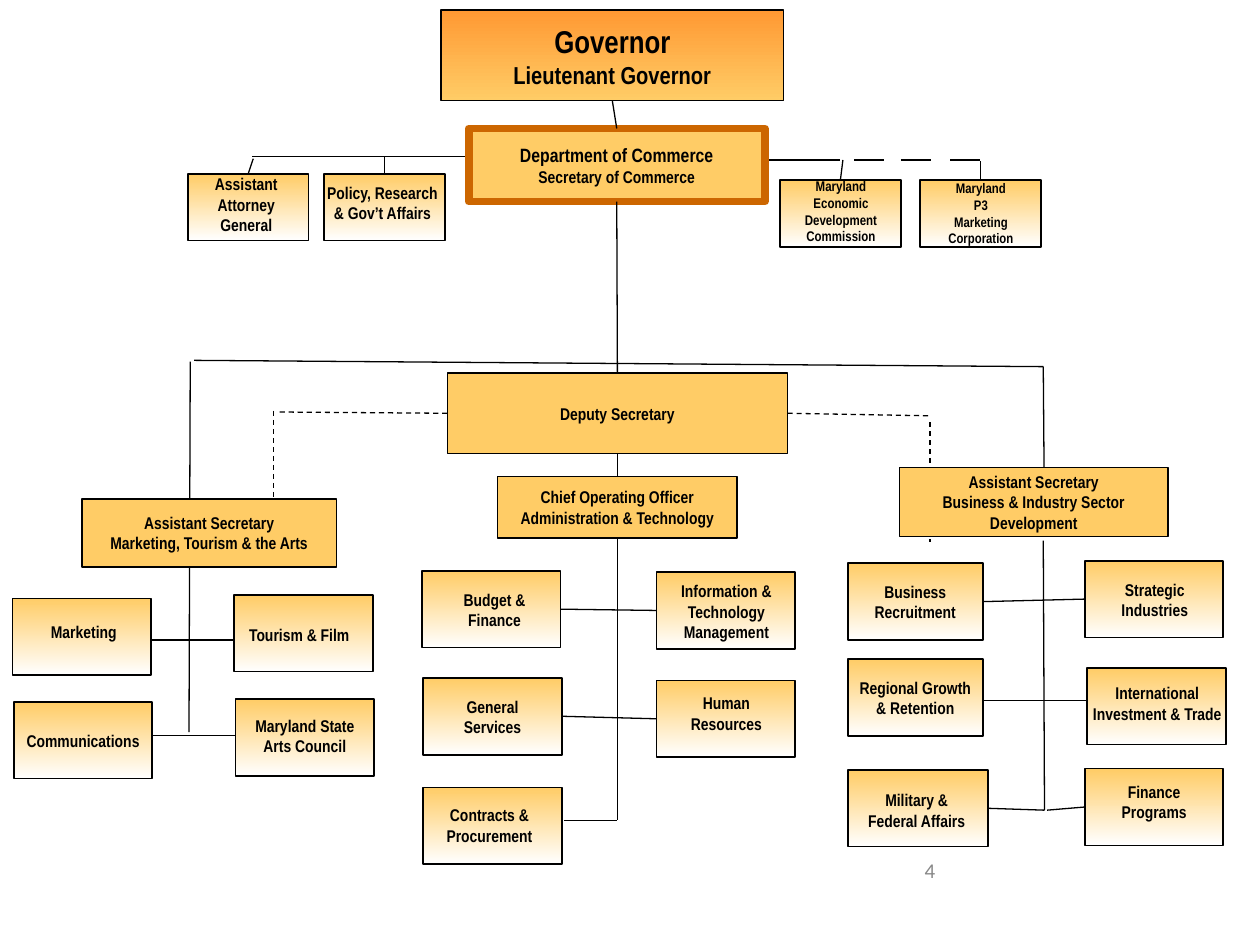
from lxml import etree
from pptx import Presentation
from pptx.dml.color import RGBColor
from pptx.enum.dml import MSO_LINE
from pptx.enum.shapes import MSO_CONNECTOR, MSO_SHAPE
from pptx.enum.text import MSO_ANCHOR, PP_ALIGN
from pptx.oxml.ns import qn
from pptx.util import Inches, Pt

RECT = MSO_SHAPE.RECTANGLE
LINE = MSO_CONNECTOR.STRAIGHT
DASH = MSO_LINE.DASH
TOP, MID = MSO_ANCHOR.TOP, MSO_ANCHOR.MIDDLE
MIDST, RIGHT = PP_ALIGN.CENTER, PP_ALIGN.RIGHT
NORTH, WEST, SOUTH, EAST = range(4)

COLORS = {"ink": "000000", "gold": "FFCC66", "amber": "FF9933",
          "rust": "CC6600", "white": "FFFFFF", "gray": "888888"}
FADE = ("gold", "white")
BODY = {"name": "Arial Narrow", "bold": True}

HEADS = {
    "gov": ((3.5, 0.08, 2.72, 0.72), ("amber", "gold"), "ink", 0.75,
            "Governor\nLieutenant Governor", (18, 14)),
    "dept": ((3.72, 1.02, 2.35, 0.58), ("gold",), "rust", 4.5,
             "Department of Commerce\nSecretary of Commerce", (11, 9.7)),
    "deputy": ((3.55, 2.96, 2.7, 0.64), ("gold",), "ink", 0.75,
               "Deputy Secretary", (9.7,)),
    "chief": ((3.95, 3.78, 1.9, 0.49), ("gold",), "ink", 0.75,
              "Chief Operating Officer\nAdministration & Technology", (9.7,)),
    "arts": ((0.65, 3.96, 2.02, 0.54), ("gold",), "ink", 0.75,
             "Assistant Secretary\nMarketing, Tourism & the Arts", (9.7,)),
    "sector": ((7.14, 3.71, 2.13, 0.55), ("gold",), "ink", 0.75,
               "Assistant Secretary\nBusiness & Industry Sector\nDevelopment",
               (9.7,)),
    "comms": ((0.11, 5.57, 1.1, 0.61), FADE, "ink", 1,
              "Communications", (9.7,)),
    "recruit": ((6.73, 4.47, 1.07, 0.61), FADE, "ink", 1,
                "Business\nRecruitment", (9.7,)),
    "growth": ((6.73, 5.23, 1.07, 0.61), FADE, "ink", 1,
               "Regional Growth\n& Retention", (9.7,)),
}

UNITS = {
    "law": ((1.49, 1.38, 0.96, 0.53), (1.33, 1.33, 1.25, 0.59),
            "Assistant\nAttorney\nGeneral", 9.7),
    "policy": ((2.57, 1.38, 0.96, 0.53), (2.41, 1.4, 1.25, 0.43),
               "Policy, Research\n& Gov’t Affairs", 9.7),
    "econ": ((6.19, 1.43, 0.96, 0.53), (6.05, 1.36, 1.25, 0.64),
             "Maryland\nEconomic\nDevelopment\nCommission", 8),
    "corp": ((7.3, 1.43, 0.96, 0.53), (7.16, 1.38, 1.25, 0.63),
             "Maryland\nP3\nMarketing\nCorporation", 7.9),
    "market": ((0.1, 4.75, 1.1, 0.61), (0.04, 4.88, 1.25, 0.41),
               "Marketing", 9.7),
    "film": ((1.86, 4.72, 1.1, 0.61), (1.75, 4.91, 1.25, 0.26),
             "Tourism & Film", 9.7),
    "council": ((1.87, 5.55, 1.1, 0.61), (1.82, 5.63, 1.2, 0.43),
                "Maryland State Arts Council", 9.7),
    "budget": ((3.35, 4.53, 1.1, 0.61), (3.3, 4.63, 1.25, 0.43),
               "Budget &\nFinance", 9.7),
    "info": ((5.21, 4.54, 1.1, 0.61), (5.14, 4.56, 1.25, 0.59),
             "Information & Technology Management", 9.7),
    "general": ((3.36, 5.38, 1.1, 0.61), (3.23, 5.48, 1.36, 0.43),
                "General\nServices", 9.7),
    "human": ((5.21, 5.4, 1.1, 0.61), (5.14, 5.45, 1.25, 0.43),
              "Human\nResources", 9.7),
    "buying": ((3.36, 6.25, 1.1, 0.61), (3.26, 6.34, 1.25, 0.43),
               "Contracts &\nProcurement", 9.7),
    "plans": ((8.61, 4.45, 1.1, 0.61), (8.54, 4.55, 1.25, 0.43),
              "Strategic\nIndustries", 9.7),
    "trade": ((8.63, 5.3, 1.1, 0.61), (8.56, 5.37, 1.25, 0.43),
              "International\nInvestment & Trade", 9.7),
    "army": ((6.73, 6.11, 1.11, 0.61), (6.65, 6.22, 1.25, 0.43),
             "Military &\nFederal Affairs", 9.7),
    "funds": ((8.61, 6.1, 1.1, 0.61), (8.55, 6.15, 1.22, 0.43),
              "Finance\nPrograms", 9.7),
}

WIRES = [
    ((1.51, 2.87), (1.5, 5.81)), ((1.54, 2.86), (8.28, 2.91)),
    ((8.28, 2.91), (8.29, 4.17)), ((8.28, 4.29), (8.29, 6.43)),
    ((2, 1.24), (3.72, 1.24)), ((4.16, 1.27), (6.67, 1.27)),
    ((1.2, 5.08), (1.86, 5.08)), ((1.21, 5.84), (1.87, 5.84)),
    ((7.8, 5.56), (8.63, 5.56)), ((4.48, 6.51), (4.9, 6.51)),
]
DOTS = [((2.17, 3.26), (2.17, 4.24)), ((7.38, 3.35), (7.38, 4.3))]
JOINS = [
    (("gov", SOUTH), ("dept", NORTH)), (("dept", SOUTH), ("deputy", NORTH)),
    (("deputy", SOUTH), ("chief", NORTH)), (("chief", SOUTH), (4.9, 6.51)),
    ((2.01, 1.26), ("law", NORTH)), ((3.05, 1.24), ("policy", NORTH)),
    ((6.69, 1.27), ("econ", NORTH)), ((7.78, 1.28), ("corp", NORTH)),
    (("budget", EAST), ("info", WEST)), (("general", EAST), ("human", WEST)),
    (("recruit", EAST), ("plans", WEST)), (("army", EAST), (8.29, 6.43)),
    ((8.31, 6.43), ("funds", WEST)),
]
SPURS = [(("deputy", WEST), (2.19, 3.27)), (("deputy", EAST), (7.38, 3.3))]


def rgb(key):
    return RGBColor.from_string(COLORS[key])


def apply(item, vals):
    for key, val in vals.items():
        setattr(item, key, val)


def write(shape, text, sizes, font=BODY, ink="ink", align=MIDST,
          anchor=MID, wrap=False):
    frame = shape.text_frame
    frame.text = text
    apply(frame, {"word_wrap": wrap, "vertical_anchor": anchor})
    for num, para in enumerate(frame.paragraphs):
        para.alignment = align
        size = Pt(sizes[min(num, len(sizes) - 1)])
        apply(para.font, {**font, "size": size})
        para.font.color.rgb = rgb(ink)


def box(slide, at, fill, edge="ink", width=1):
    shape = slide.shapes.add_shape(RECT, *map(Inches, at))
    shape.shadow.inherit = False
    if len(fill) == 1:
        shape.fill.solid()
        shape.fill.fore_color.rgb = rgb(fill[0])
    else:
        shape.fill.gradient()
        shape.fill.gradient_angle = 270
        for stop, key in zip(shape.fill.gradient_stops, fill):
            stop.color.rgb = rgb(key)
    shape.line.color.rgb = rgb(edge)
    shape.line.width = Pt(width)
    return shape


def label(slide, at, text, size, **style):
    area = slide.shapes.add_textbox(*map(Inches, at))
    write(area, text, (size,), wrap=True, **style)


def wire(slide, start, end, boxes=None, dash=None):
    spots = [(0, 0) if isinstance(spot[0], str) else spot
             for spot in (start, end)]
    line = slide.shapes.add_connector(
        LINE, *(Inches(val) for spot in spots for val in spot))
    for spot, join in ((start, line.begin_connect), (end, line.end_connect)):
        if isinstance(spot[0], str):
            join(boxes[spot[0]], spot[1])
    line.line.color.rgb = rgb("ink")
    apply(line.line, {"width": Pt(0.75), "dash_style": dash})
    etree.SubElement(line._element.spPr, qn("a:effectLst"))


def main():
    deck = Presentation()
    apply(deck, {"slide_width": Inches(10), "slide_height": Inches(7.5)})
    slide = deck.slides.add_slide(deck.slide_layouts[6])
    for start, end in WIRES:
        wire(slide, start, end)
    for start, end in DOTS:
        wire(slide, start, end, dash=DASH)
    for left in (6.78, 7.15, 7.54):
        wire(slide, (left, 1.27), (left + 0.24, 1.27))
    boxes = {}
    for key, (at, fill, edge, width, text, sizes) in HEADS.items():
        boxes[key] = box(slide, at, fill, edge, width)
        write(boxes[key], text, sizes)
    for key, (at, *_) in UNITS.items():
        boxes[key] = box(slide, at, FADE)
    for start, end in JOINS:
        wire(slide, start, end, boxes)
    for start, end in SPURS:
        wire(slide, start, end, boxes, DASH)
    for _, at, text, size in UNITS.values():
        label(slide, at, text, size, anchor=TOP)
    label(slide, (5.27, 6.71, 2.25, 0.4), "4", 12, font={"name": "Calibri"},
          ink="gray", align=RIGHT)
    deck.save("out.pptx")


if __name__ == "__main__":
    main()
